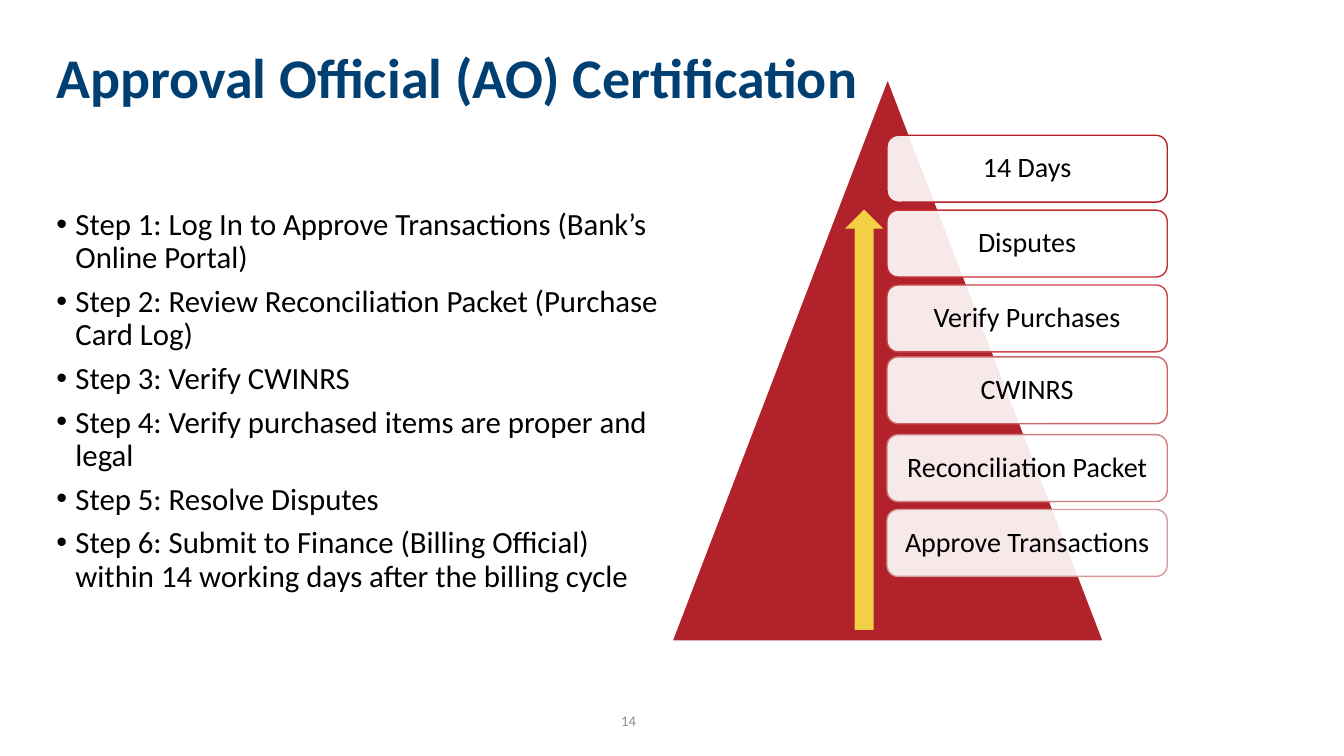
from dataclasses import dataclass

from lxml.etree import SubElement
from pptx import Presentation
from pptx.dml.color import RGBColor
from pptx.enum.shapes import MSO_SHAPE as Kind
from pptx.enum.text import MSO_ANCHOR as Anchor, MSO_AUTO_SIZE as Fit, PP_ALIGN as Align
from pptx.oxml.ns import qn
from pptx.util import Inches, Pt

COLORS = {
    "white": "FFFFFF", "black": "000000", "navy": "003F72",
    "red": "B1222A", "gold": "F3CF45", "gray": "8C8C8C",
}
FONT = "Calibri"
WIDE, HIGH = Inches(13.33), Inches(7.5)


@dataclass
class Area:
    """A place on the slide, in percent of its width and height."""
    x: float
    y: float
    w: float
    h: float

    def box(self) -> tuple:
        return (int(WIDE * self.x / 100), int(HIGH * self.y / 100),
                int(WIDE * self.w / 100), int(HIGH * self.h / 100))


@dataclass
class Stage:
    text: str
    edge: str
    nudge: float = 0


STAGES = [
    Stage("14 Days", "B1222A"),
    Stage("Disputes", "C62D34"),
    Stage("Verify Purchases", "CD454A"),
    Stage("CWINRS", "CF6366", -0.4),
    Stage("Reconciliation Packet", "D27F81"),
    Stage("Approve Transactions", "D79A9B"),
]
FIRST, PITCH = 17.9, 9.9

STEPS = [
    "Log In to Approve Transactions (Bank’s Online Portal)",
    "Review Reconciliation Packet (Purchase Card Log)",
    "Verify CWINRS",
    "Verify purchased items are proper and legal",
    "Resolve Disputes",
    "Submit to Finance (Billing Official) within 14 working days "
    "after the billing cycle",
]


def tint(name: str) -> RGBColor:
    return RGBColor.from_string(COLORS.get(name, name))


def write(para, text: str, size: float, color: str, bold: bool = False) -> None:
    run = para.add_run()
    run.text = text
    font = run.font
    font.name, font.size, font.bold = FONT, Pt(size), bold
    font.color.rgb = tint(color)


def draw(slide, kind: Kind, area: Area, fill: str, edge: str = ""):
    shape = slide.shapes.add_shape(kind, *area.box())
    shape.shadow.inherit = False
    shape.fill.solid()
    shape.fill.fore_color.rgb = tint(fill)
    if edge:
        shape.line.color.rgb = tint(edge)
        shape.line.width = Pt(1)
    else:
        shape.line.fill.background()
    return shape


def add_stage(slide, row: int, stage: Stage) -> None:
    area = Area(66, FIRST + row * PITCH + stage.nudge, 20.85, 8.85)
    card = draw(slide, Kind.ROUNDED_RECTANGLE, area, "white", stage.edge)
    color = card.fill._xPr.find(qn("a:solidFill"))[0]
    SubElement(color, qn("a:alpha"), val="90000")
    frame = card.text_frame
    frame.word_wrap = True
    frame.vertical_anchor = Anchor.MIDDLE
    frame.margin_left = frame.margin_right = Inches(0.08)
    frame.margin_top = frame.margin_bottom = Inches(0.08)
    para = frame.paragraphs[0]
    para.alignment, para.line_spacing = Align.CENTER, 0.9
    write(para, stage.text, 20, "black")


def add_text(slide, area: Area):
    frame = slide.shapes.add_textbox(*area.box()).text_frame
    frame.word_wrap = True
    return frame


def add_title(slide) -> None:
    title = slide.shapes.title
    title.left, title.top, title.width, title.height = Area(3.45, 4.93, 79.75, 11.33).box()
    frame = title.text_frame
    frame.auto_size, frame.vertical_anchor = Fit.NONE, Anchor.MIDDLE
    para = frame.paragraphs[0]
    para.alignment, para.line_spacing = Align.LEFT, 0.9
    write(para, "Approval Official (AO) Certification", 40, "navy", True)


def add_steps(slide) -> None:
    frame = add_text(slide, Area(3.45, 21.2, 47.4, 69.47))
    frame.margin_top = Inches(0.48)
    for num, text in enumerate(STEPS, 1):
        para = frame.paragraphs[0] if num == 1 else frame.add_paragraph()
        para.line_spacing = 0.9
        para.space_before = Pt(0 if num == 1 else 7.5)
        props = para._p.get_or_add_pPr()
        props.set("marL", str(Inches(0.19)))
        props.set("indent", str(-Inches(0.19)))
        SubElement(props, qn("a:buFont"), typeface="Arial")
        SubElement(props, qn("a:buChar"), char="•")
        write(para, f"Step {num}: {text}", 22, "black")


def main() -> None:
    deck = Presentation()
    deck.slide_width, deck.slide_height = WIDE, HIGH
    slide = deck.slides.add_slide(deck.slide_layouts[5])

    # Pyramid with its stages
    draw(slide, Kind.ISOSCELES_TRIANGLE, Area(50, 10.4, 32.1, 74.4), "red", "white")
    for row, stage in enumerate(STAGES):
        add_stage(slide, row, stage)

    # Title and steps
    add_title(slide)
    add_steps(slide)

    # Upward arrow
    draw(slide, Kind.UP_ARROW, Area(62.87, 27.73, 2.85, 55.6), "gold")

    # Page number
    frame = add_text(slide, Area(43.96, 92.67, 5.63, 5.33))
    frame.vertical_anchor = Anchor.MIDDLE
    frame.paragraphs[0].alignment = Align.CENTER
    write(frame.paragraphs[0], "14", 10.5, "gray")

    deck.save("out.pptx")


if __name__ == "__main__":
    main()
